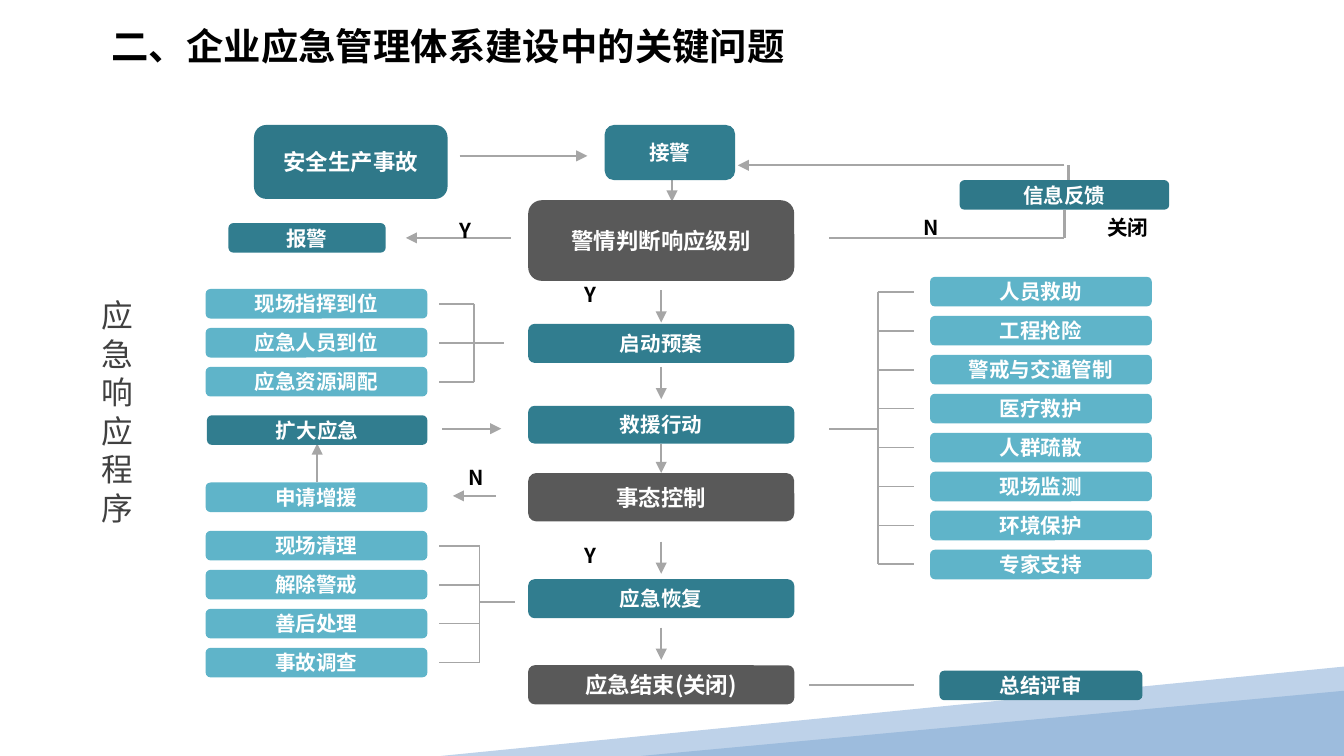
from pptx import Presentation
from pptx.dml.color import RGBColor
from pptx.enum.shapes import MSO_CONNECTOR as Connector, MSO_SHAPE as Shape
from pptx.enum.text import MSO_ANCHOR as Anchor, MSO_AUTO_SIZE as AutoSize, PP_ALIGN as Align
from pptx.oxml.ns import qn
from pptx.util import Inches, Pt
from lxml.etree import SubElement

FONT = "Noto Sans CJK SC"
WHITE = RGBColor(0xFF, 0xFF, 0xFF)
BLACK = RGBColor(0x00, 0x00, 0x00)
CHARCOAL = RGBColor(0x40, 0x40, 0x40)
GRAY = RGBColor(0x59, 0x59, 0x59)
LINE_GRAY = RGBColor(0xA6, 0xA6, 0xA6)
TEAL = RGBColor(0x31, 0x7D, 0x8F)
DARK_TEAL = RGBColor(0x2F, 0x78, 0x89)
LIGHT_TEAL = RGBColor(0x5F, 0xB4, 0xC9)
PALE_BLUE = RGBColor(0xBE, 0xD2, 0xE9)
SOFT_BLUE = RGBColor(0x9D, 0xBC, 0xDD)

SLIDE_WIDTH = Inches(10)
SLIDE_HEIGHT = SLIDE_WIDTH * 9 // 16
BAR_WIDTH, BAR_HEIGHT, BAR_STEP = 1.65, 0.22, 0.29
LEFT_BARS, RIGHT_BARS = 1.53, 6.92
MAIN_LEFT, MAIN_WIDTH, MAIN_CENTER = 3.93, 1.98, 4.92

BOXES = [
    ("安全生产事故", 1.89, 0.93, 1.44, 0.55, DARK_TEAL, 12),
    ("接警", 4.5, 0.93, 0.97, 0.41, TEAL, 11),
    ("信息反馈", 7.14, 1.34, 1.56, BAR_HEIGHT, DARK_TEAL, 11),
    ("报警", 1.7, 1.66, 1.17, BAR_HEIGHT, TEAL, 11),
    ("扩大应急", 1.54, 3.09, 1.64, BAR_HEIGHT, TEAL, 11),
    ("申请增援", LEFT_BARS, 3.59, BAR_WIDTH, BAR_HEIGHT, LIGHT_TEAL, 11),
    ("总结评审", 6.99, 4.99, 1.51, BAR_HEIGHT, DARK_TEAL, 11),
]
MAIN_STEPS = [
    ("警情判断响应级别", 1.49, 0.6, GRAY, 12),
    ("启动预案", 2.41, 0.29, TEAL, 11),
    ("救援行动", 3.02, 0.28, TEAL, 11),
    ("事态控制", 3.52, 0.36, GRAY, 12),
    ("应急恢复", 4.31, 0.29, TEAL, 11),
    ("应急结束(关闭)", 4.95, 0.29, GRAY, 12),
]
MAIN_ARROWS = [(2.16, 2.4), (2.73, 2.97), (3.3, 3.52), (4.03, 4.27), (4.67, 4.91)]
ARROWS = [
    (3.42, 1.16, 4.37, 1.16),
    (5, 1.34, 5, 1.5),
    (3.8, 1.77, 3.02, 1.77),
    (7.92, 1.23, 5.49, 1.23),
    (3.69, 3.69, 3.37, 3.69),
    (3.29, 3.19, 3.73, 3.19),
    (2.36, 3.59, 2.36, 3.3),
]
FEEDBACK_LINES = [
    (6.17, 1.77, 7.92, 1.77),
    (7.92, 1.77, 7.92, 1.56),
    (7.95, 1.23, 7.95, 1.34),
]
LABELS = [
    ("Y", 3.17, 1.6, 0.58),
    ("N", 6.64, 1.58, 0.58),
    ("Y", 4.1, 2.08, 0.58),
    ("N", 3.25, 3.44, 0.58),
    ("Y", 4.1, 4.02, 0.58),
    ("关闭", 8, 1.58, 0.78),
]
GROUPS = [
    {"names": ["现场指挥到位", "应急人员到位", "应急资源调配"],
     "left": LEFT_BARS, "top": 2.15, "spine": 3.53, "tick": 3.27,
     "trunk": (3.75, 2.55), "spine_weight": 1},
    {"names": ["现场清理", "解除警戒", "善后处理", "事故调查"],
     "left": LEFT_BARS, "top": 3.95, "spine": 3.57, "tick": 3.27,
     "trunk": (3.83, 4.48), "spine_weight": 0.75},
    {"names": ["人员救助", "工程抢险", "警戒与交通管制", "医疗救护",
               "人群疏散", "现场监测", "环境保护", "专家支持"],
     "left": RIGHT_BARS, "top": 2.06, "spine": 6.53, "tick": 6.8,
     "trunk": (6.17, 3.19), "spine_weight": 1},
]


def set_attributes(target, values):
    for name, value in values.items():
        setattr(target, name, value)


def write_text(shape, text, size, color, bold=True, align=Align.CENTER,
               anchor=Anchor.MIDDLE, margin=0, spacing=None):
    frame = shape.text_frame
    set_attributes(frame, {
        "word_wrap": True, "auto_size": AutoSize.NONE, "vertical_anchor": anchor,
        "margin_left": Inches(margin), "margin_right": Inches(margin),
        "margin_top": Inches(margin / 2), "margin_bottom": Inches(margin / 2),
    })
    paragraph = frame.paragraphs[0]
    set_attributes(paragraph, {"alignment": align, "line_spacing": spacing})
    run = paragraph.add_run()
    run.text = text
    set_attributes(run.font, {"name": FONT, "size": Pt(size), "bold": bold})
    run.font.color.rgb = color
    SubElement(run.font._element, qn("a:ea"), typeface=FONT)


def paint(shape, color):
    shape.shadow.inherit = False
    shape.fill.solid()
    shape.fill.fore_color.rgb = color
    shape.line.fill.background()


def add_box(slide, text, left, top, width, height, color, size=11):
    shape = slide.shapes.add_shape(Shape.ROUNDED_RECTANGLE, Inches(left), Inches(top),
                                   Inches(width), Inches(height))
    paint(shape, color)
    write_text(shape, text, size, WHITE)


def add_label(slide, text, left, top, width, height=BAR_HEIGHT, size=11, color=BLACK, **style):
    box = slide.shapes.add_textbox(Inches(left), Inches(top), Inches(width), Inches(height))
    write_text(box, text, size, color, **style)


def add_line(slide, start_x, start_y, end_x, end_y, weight=1.0, arrow=False):
    connector = slide.shapes.add_connector(
        Connector.STRAIGHT, Inches(start_x), Inches(start_y), Inches(end_x), Inches(end_y))
    connector.line.color.rgb = LINE_GRAY
    connector.line.width = Pt(weight)
    if arrow:
        SubElement(connector.line._get_or_add_ln(), qn("a:tailEnd"), type="triangle")
    SubElement(connector._element.spPr, qn("a:effectLst"))


def add_group(slide, names, left, top, spine, tick, trunk, spine_weight):
    middles = [top + BAR_HEIGHT / 2 + BAR_STEP * index for index in range(len(names))]
    add_line(slide, spine, middles[0], spine, middles[-1], spine_weight)
    trunk_x, trunk_y = trunk
    add_line(slide, spine, trunk_y, trunk_x, trunk_y)
    for name, middle in zip(names, middles):
        add_line(slide, spine, middle, tick, middle)
        add_box(slide, name, left, middle - BAR_HEIGHT / 2, BAR_WIDTH, BAR_HEIGHT, LIGHT_TEAL)


def add_corner_bands(slide):
    builder = slide.shapes.build_freeform(SLIDE_WIDTH, Inches(4.96), scale=1.0)
    builder.add_line_segments([(SLIDE_WIDTH, Inches(5.58)), (Inches(6.73), SLIDE_HEIGHT),
                               (Inches(3.28), SLIDE_HEIGHT)], close=True)
    paint(builder.convert_to_shape(), PALE_BLUE)
    left, top = Inches(4.77), Inches(5.14)
    triangle = slide.shapes.add_shape(Shape.ISOSCELES_TRIANGLE, left, top,
                                      SLIDE_WIDTH - left, SLIDE_HEIGHT - top)
    triangle.adjustments[0] = 1
    paint(triangle, SOFT_BLUE)


def add_title(slide, text):
    title = slide.shapes.title
    set_attributes(title, {"left": Inches(0.73), "top": Inches(0.12),
                           "width": Inches(7.13), "height": Inches(0.44)})
    write_text(title, text, 20, BLACK, align=Align.LEFT, margin=0.1)


def main():
    presentation = Presentation()
    set_attributes(presentation, {"slide_width": SLIDE_WIDTH, "slide_height": SLIDE_HEIGHT})
    slide = presentation.slides.add_slide(presentation.slide_layouts[5])
    add_corner_bands(slide)
    add_title(slide, "二、企业应急管理体系建设中的关键问题")
    add_label(slide, "应急响应程序", 0.66, 2.15, 0.49, 1.82, 17, CHARCOAL, bold=False,
              align=Align.LEFT, anchor=Anchor.TOP, margin=0.1, spacing=Pt(20.6))
    for points in ARROWS:
        add_line(slide, *points, weight=1.25, arrow=True)
    for start, end in MAIN_ARROWS:
        add_line(slide, MAIN_CENTER, start, MAIN_CENTER, end, weight=1.25, arrow=True)
    for points in FEEDBACK_LINES:
        add_line(slide, *points, weight=1.25)
    add_line(slide, 6.02, 5.1, 6.8, 5.1)
    for group in GROUPS:
        add_group(slide, **group)
    for box in BOXES:
        add_box(slide, *box)
    for text, top, height, color, size in MAIN_STEPS:
        add_box(slide, text, MAIN_LEFT, top, MAIN_WIDTH, height, color, size)
    for label in LABELS:
        add_label(slide, *label)
    presentation.save("out.pptx")


if __name__ == "__main__":
    main()
